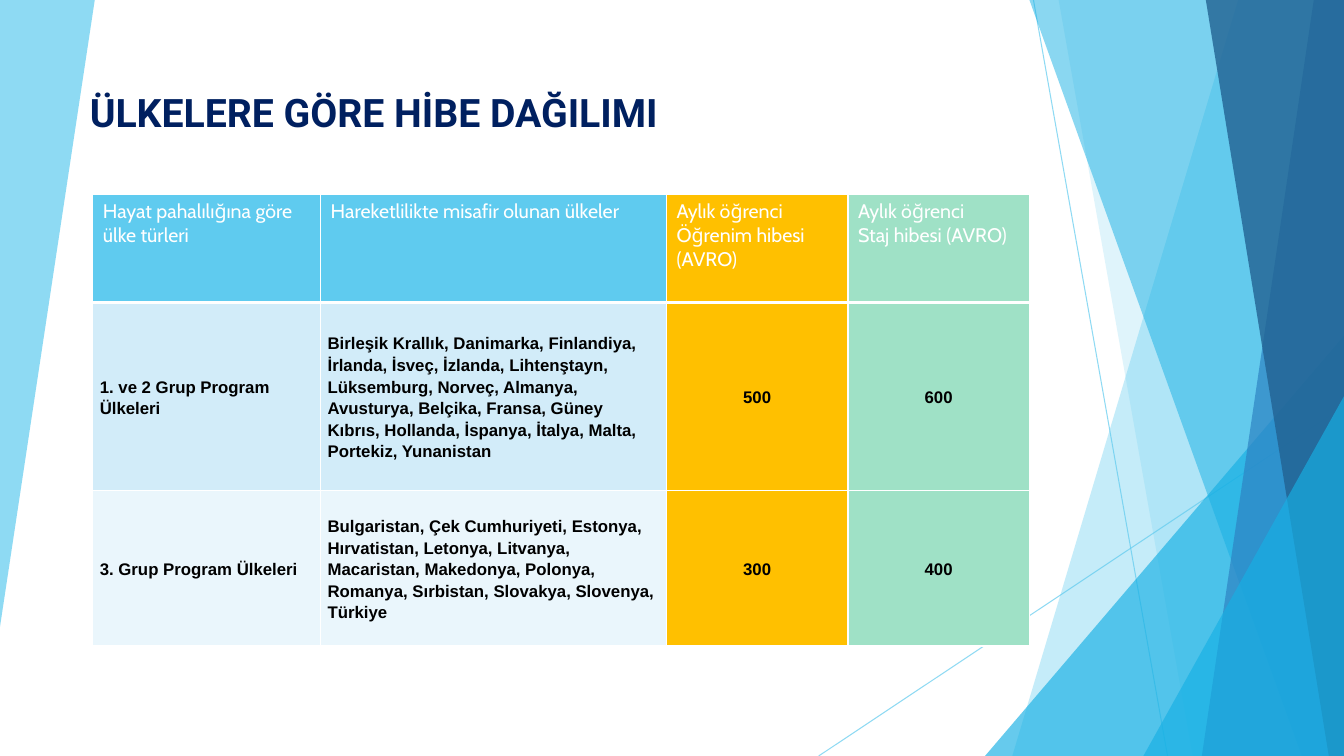
from lxml import etree
from pptx import Presentation
from pptx.dml.color import RGBColor
from pptx.enum import shapes, text
from pptx.oxml import ns
from pptx.util import Inches, Pt

SKY = RGBColor(0x5F, 0xCB, 0xEF)
CYAN = RGBColor(0x17, 0xB0, 0xE4)
BLUE = RGBColor(0x2E, 0x83, 0xC3)
STEEL = RGBColor(0x22, 0x62, 0x92)
NAVY = RGBColor(0x00, 0x20, 0x60)
AMBER = RGBColor(0xFF, 0xC0, 0x00)
MINT = RGBColor(0x9F, 0xE1, 0xC6)
PALE = RGBColor(0xD2, 0xEC, 0xF9)
PALER = RGBColor(0xEA, 0xF6, 0xFC)
WHITE = RGBColor(0xFF, 0xFF, 0xFF)
BLACK = RGBColor(0x00, 0x00, 0x00)

WIDTH, HEIGHT = 13.33, 7.5
HEADING = "ÜLKELERE GÖRE HİBE DAĞILIMI"
GRANTS = [
    ("Hayat pahalılığına göre ülke türleri",
     "Hareketlilikte misafir olunan ülkeler",
     "Aylık öğrenci Öğrenim hibesi (AVRO)",
     "Aylık öğrenci \vStaj hibesi (AVRO)"),
    ("1. ve 2 Grup Program Ülkeleri",
     "Birleşik Krallık, Danimarka, Finlandiya, İrlanda, İsveç, İzlanda, "
     "Lihtenştayn, Lüksemburg, Norveç, Almanya, Avusturya, Belçika, Fransa, "
     "Güney Kıbrıs, Hollanda, İspanya, İtalya, Malta, Portekiz, Yunanistan",
     "500", "600"),
    ("3. Grup Program Ülkeleri",
     "Bulgaristan, Çek Cumhuriyeti, Estonya, Hırvatistan, Letonya, Litvanya, "
     "Macaristan, Makedonya, Polonya, Romanya, Sırbistan, Slovakya, Slovenya, "
     "Türkiye",
     "300", "400"),
]
COLUMN_WIDTHS = [2.26, 3.43, 1.8, 1.8]
ROW_HEIGHTS = [1.07, 1.87, 1.54]
ROW_FILLS = [SKY, PALE, PALER]
GRANT_FILLS = {2: AMBER, 3: MINT}

RAYS = [((10.25, 0), (11.58, HEIGHT)), ((WIDTH, 4.03), (8.12, HEIGHT))]
LEFT_WEDGE = [(0, 0), (0.94, 0), (0, 6.22)]


def right_band(top, bottom):
    return [(top, 0), (WIDTH, 0), (WIDTH, HEIGHT), (bottom, HEIGHT)]


BACK_BANDS = [(right_band(12.28, 10.04), SKY, 36),
              (right_band(10.5, 11.83), SKY, 20)]
FRONT_BANDS = [(right_band(10.21, 12.91), CYAN, 50),
               (right_band(13.03, 11.92), BLUE, 70),
               (right_band(11.96, 13.18), STEEL, 80)]
LARGE_CORNER = (9.77, 3.33)
SMALL_CORNER = (11.34, 3.93)


def set_opacity(item, percent):
    for color in item.element.spPr.iter(ns.qn("a:srgbClr")):
        etree.SubElement(color, ns.qn("a:alpha"), val=str(percent * 1000))


def paint(shape, color, percent):
    shape.shadow.inherit = False
    shape.fill.solid()
    shape.fill.fore_color.rgb = color
    shape.line.fill.background()
    set_opacity(shape, percent)


def add_band(slide, points, color, percent):
    start, *rest = [(Inches(x), Inches(y)) for x, y in points]
    builder = slide.shapes.build_freeform(*start)
    builder.add_line_segments(rest, close=True)
    paint(builder.convert_to_shape(), color, percent)


def add_corner(slide, left, top):
    corner = slide.shapes.add_shape(
        shapes.MSO_SHAPE.ISOSCELES_TRIANGLE, Inches(left), Inches(top),
        Inches(WIDTH - left), Inches(HEIGHT - top))
    corner.adjustments[0] = 1.0
    paint(corner, CYAN, 66)


def add_ray(slide, start, end):
    ray = slide.shapes.add_connector(
        shapes.MSO_CONNECTOR.STRAIGHT, *map(Inches, start + end))
    ray.line.color.rgb = SKY
    ray.line.width = Pt(0.75)
    set_opacity(ray, 70)
    etree.SubElement(ray.element.spPr, ns.qn("a:effectLst"))


def add_decor(slide):
    add_band(slide, LEFT_WEDGE, SKY, 70)
    for start, end in RAYS:
        add_ray(slide, start, end)
    for band in BACK_BANDS:
        add_band(slide, *band)
    add_corner(slide, *LARGE_CORNER)
    for band in FRONT_BANDS:
        add_band(slide, *band)
    add_corner(slide, *SMALL_CORNER)


def style_runs(paragraph, font_name, size, color, bold):
    for run in paragraph.runs:
        run.font.name = font_name
        run.font.size = Pt(size)
        run.font.color.rgb = color
        run.font.bold = bold


def add_heading(slide):
    heading = slide.shapes.title
    heading.left, heading.top = Inches(0.79), Inches(0.63)
    heading.width, heading.height = Inches(9.43), Inches(0.76)
    frame = heading.text_frame
    frame.text = HEADING
    frame.vertical_anchor = text.MSO_ANCHOR.BOTTOM
    frame.paragraphs[0].alignment = text.PP_ALIGN.LEFT
    style_runs(frame.paragraphs[0], "Roboto", 28, NAVY, True)
    slide.shapes.element.append(heading.element)


def set_borders(cell, bottom):
    properties = cell._tc.get_or_add_tcPr()
    widths = {"lnL": 1, "lnR": 1, "lnT": 1, "lnB": bottom}
    for index, (side, points) in enumerate(widths.items()):
        border = etree.Element(ns.qn("a:" + side), w=str(Pt(points)))
        fill = etree.SubElement(border, ns.qn("a:solidFill"))
        etree.SubElement(fill, ns.qn("a:srgbClr"), val=str(WHITE))
        properties.insert(index, border)


def fill_cell(cell, row, column, wording):
    cell.fill.solid()
    cell.fill.fore_color.rgb = GRANT_FILLS.get(column, ROW_FILLS[row])
    cell.text_frame.text = wording
    paragraph = cell.text_frame.paragraphs[0]
    if row == 0:
        style_runs(paragraph, "Cabin", 14, WHITE, False)
        set_borders(cell, 3)
        return
    cell.vertical_anchor = text.MSO_ANCHOR.MIDDLE
    cell.margin_left = cell.margin_right = Inches(0.07)
    cell.margin_top = cell.margin_bottom = 0
    paragraph.line_spacing = 1.15
    if column in GRANT_FILLS:
        paragraph.alignment = text.PP_ALIGN.CENTER
    style_runs(paragraph, "Arial", 12, BLACK, True)
    set_borders(cell, 1)


def add_grants(slide):
    grants = slide.shapes.add_table(
        len(ROW_HEIGHTS), len(COLUMN_WIDTHS), Inches(0.92), Inches(1.93),
        Inches(sum(COLUMN_WIDTHS)), Inches(sum(ROW_HEIGHTS))).table
    for column, width in zip(grants.columns, COLUMN_WIDTHS):
        column.width = Inches(width)
    for row, height in zip(grants.rows, ROW_HEIGHTS):
        row.height = Inches(height)
    for row, wordings in enumerate(GRANTS):
        for column, wording in enumerate(wordings):
            fill_cell(grants.cell(row, column), row, column, wording)


def main():
    deck = Presentation()
    deck.slide_width, deck.slide_height = Inches(WIDTH), Inches(HEIGHT)
    slide = deck.slides.add_slide(deck.slide_layouts.get_by_name("Title Only"))
    add_decor(slide)
    add_heading(slide)
    add_grants(slide)
    deck.save("out.pptx")


if __name__ == "__main__":
    main()
